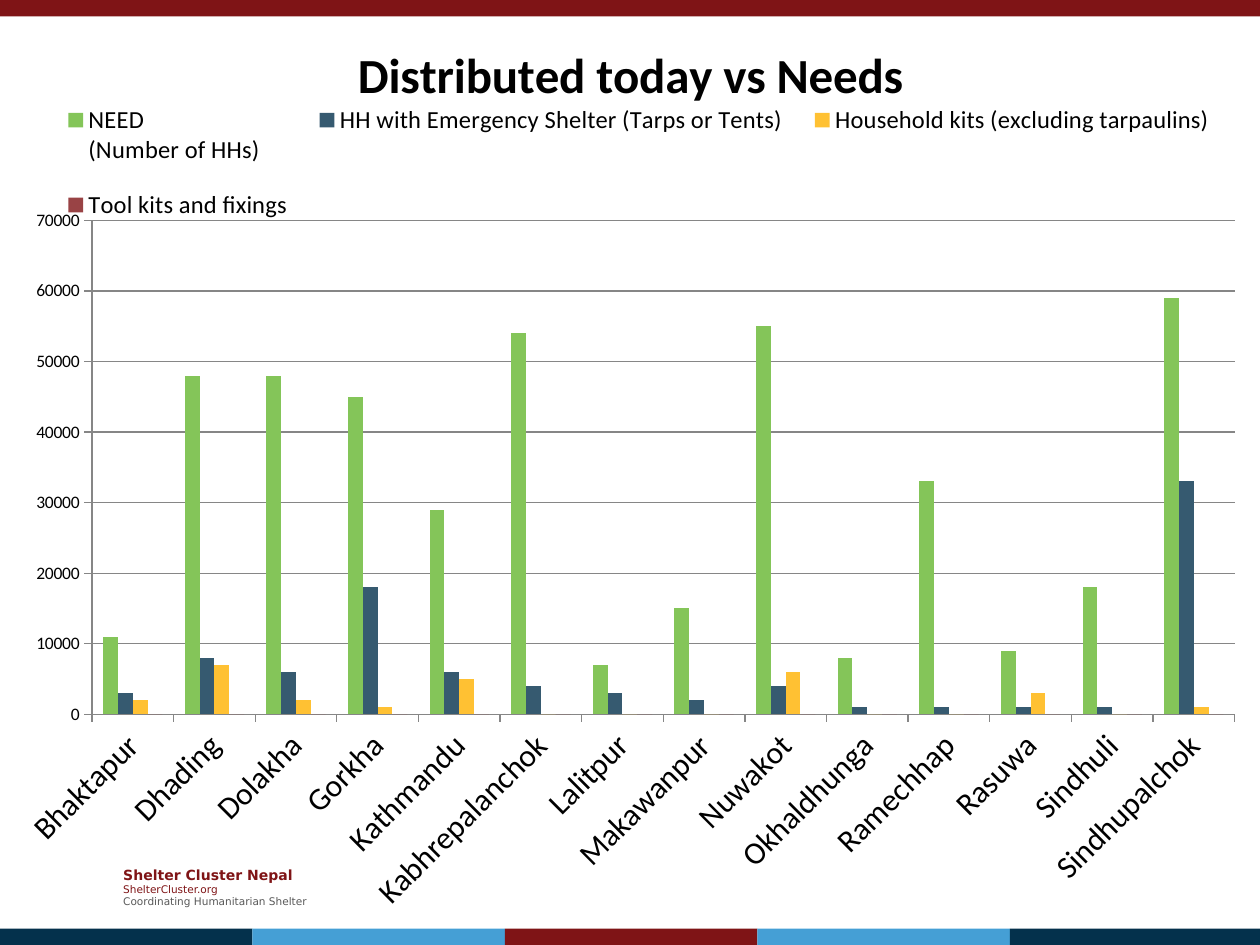
from pptx import Presentation
from pptx import util as u
from pptx.chart.data import CategoryChartData
from pptx.dml.color import RGBColor
from pptx.enum import chart as charts, shapes, text
from pptx.oxml import parse_xml
from pptx.oxml.ns import nsdecls, qn

MAROON, NAVY, SKY, GREY, AXIS = "7F1416", "04314C", "459FD5", "595959", "868686"
CHART_WIDTH, CHART_HEIGHT = 10, 7.24
BAND_WIDTH = 10.02 / 5

DISTRICTS = ["Bhaktapur", "Dhading", "Dolakha", "Gorkha", "Kathmandu",
             "Kabhrepalanchok", "Lalitpur", "Makawanpur", "Nuwakot",
             "Okhaldhunga", "Ramechhap", "Rasuwa", "Sindhuli", "Sindhupalchok"]
THOUSANDS = [
    ("NEED \n(Number of HHs)", "84C559",
     [11, 48, 48, 45, 29, 54, 7, 15, 55, 8, 33, 9, 18, 59]),
    ("HH with Emergency Shelter (Tarps or Tents)", "365A70",
     [3, 8, 6, 18, 6, 4, 3, 2, 4, 1, 1, 1, 1, 33]),
    ("Household kits (excluding tarpaulins)", "FFC133",
     [2, 7, 2, 1, 5, 0, 0, 0, 6, 0, 0, 3, 0, 1]),
    ("Tool kits and fixings", "994345", [0] * len(DISTRICTS)),
]
FOOTER = [("Shelter Cluster Nepal", 8, MAROON, True),
          ("ShelterCluster.org", 6, MAROON, False),
          ("Coordinating Humanitarian Shelter", 6, GREY, False)]


def color(value):
    return RGBColor.from_string(value)


def place(element, index, left, top, width=None, height=None, inner=False):
    for old in element.findall(qn("c:layout")):
        element.remove(old)
    parts = [("layoutTarget", "inner")] if inner else []
    parts += [("xMode", "edge"), ("yMode", "edge"),
              ("x", left / CHART_WIDTH), ("y", top / CHART_HEIGHT)]
    if width is not None:
        parts += [("w", width / CHART_WIDTH), ("h", height / CHART_HEIGHT)]
    body = "".join(f'<c:{name} val="{value}"/>' for name, value in parts)
    element.insert(index, parse_xml(
        f'<c:layout {nsdecls("c")}><c:manualLayout>{body}</c:manualLayout></c:layout>'))


class SlideBuilder:
    """Holds the style and the current page, and adds each kind of element."""

    def __init__(self, page, chart_font, footer_font):
        self.page = page
        self.chart_font = chart_font
        self.footer_font = footer_font

    def style(self, font, name, size, value="000000", bold=False):
        font.name, font.size, font.bold = name, u.Pt(size), bold
        font.color.rgb = color(value)

    def bar(self, left, top, width, height, fill):
        shape = self.page.shapes.add_shape(
            shapes.MSO_SHAPE.RECTANGLE, *map(u.Inches, (left, top, width, height)))
        shape.shadow.inherit = False
        shape.fill.solid()
        shape.fill.fore_color.rgb = color(fill)
        shape.line.fill.background()

    def textbox(self, left, top, width, height, lines):
        box = self.page.shapes.add_textbox(
            *map(u.Inches, (left, top, width, height)))
        frame = box.text_frame
        frame.word_wrap = True
        frame.vertical_anchor = text.MSO_ANCHOR.MIDDLE
        for index, (words, size, value, bold) in enumerate(lines):
            para = frame.add_paragraph() if index else frame.paragraphs[0]
            span = para.add_run()
            span.text = words
            self.style(span.font, self.footer_font, size, value, bold)

    def column_chart(self, left, top, title, categories, series):
        data = CategoryChartData(number_format="General")
        data.categories = categories
        for name, _, values in series:
            data.add_series(name, [value * 1000 for value in values])
        chart = self.page.shapes.add_chart(
            charts.XL_CHART_TYPE.COLUMN_CLUSTERED,
            *map(u.Inches, (left, top, CHART_WIDTH, CHART_HEIGHT)), data).chart
        self.style(chart.font, self.chart_font, 10)

        chart.has_title = True
        span = chart.chart_title.text_frame.paragraphs[0].add_run()
        span.text = title
        self.style(span.font, self.chart_font, 28, bold=True)

        chart.has_legend = True
        chart.legend.position = charts.XL_LEGEND_POSITION.TOP
        chart.legend.include_in_layout = False
        self.style(chart.legend.font, self.chart_font, 14)

        plot = chart.plots[0]
        plot.gap_width, plot.overlap, plot.vary_by_categories = 150, 0, False
        for item, (_, fill, _) in zip(plot.series, series):
            item.format.fill.solid()
            item.format.fill.fore_color.rgb = color(fill)

        for axis, size in ((chart.category_axis, 18), (chart.value_axis, 10)):
            self.style(axis.tick_labels.font, self.chart_font, size)
            axis.major_tick_mark = charts.XL_TICK_MARK.OUTSIDE
            axis.format.line.color.rgb = color(AXIS)
        chart.category_axis.has_major_gridlines = False
        chart.category_axis._element.find(
            f'{qn("c:txPr")}/{qn("a:bodyPr")}').set("rot", "-2700000")
        axis = chart.value_axis
        axis.minimum_scale, axis.maximum_scale, axis.major_unit = 0, 70000, 10000
        axis.major_gridlines.format.line.color.rgb = color(AXIS)

        root = chart._chartSpace.chart
        place(root.find(qn("c:title")), 1, 2.77, 0.13)
        place(root.find(qn("c:legend")), 1, 0.35, 0.51, 9.44, 1.3)
        place(root.find(qn("c:plotArea")), 0, 0.73, 1.62, 9.07, 3.92, inner=True)


def main():
    deck = Presentation()
    deck.slide_width, deck.slide_height = u.Inches(10), u.Inches(7.5)
    page = deck.slides.add_slide(deck.slide_layouts[6])
    builder = SlideBuilder(page, "Calibri", "DejaVu Sans")
    builder.textbox(0.88, 6.82, 1.73, 0.44, FOOTER)
    builder.bar(0, 0, 10, 0.13, MAROON)
    for index, fill in enumerate((NAVY, SKY, MAROON, SKY, NAVY)):
        builder.bar(index * BAND_WIDTH, 7.37, BAND_WIDTH, 0.13, fill)
    builder.column_chart(0, 0.13, "Distributed today vs Needs",
                         DISTRICTS, THOUSANDS)
    deck.save("out.pptx")


if __name__ == "__main__":
    main()
